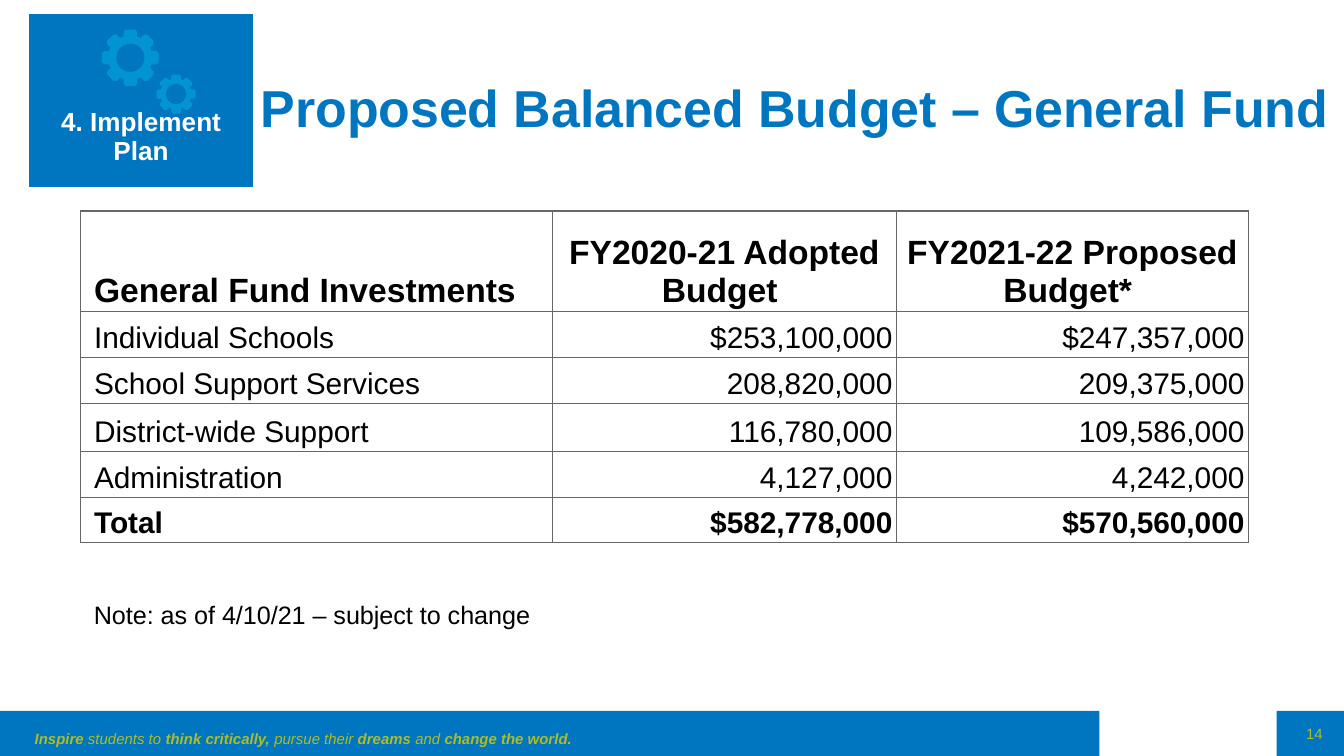
import math

import pptx
import pptx.dml.color
import pptx.enum.shapes
import pptx.enum.text
import pptx.oxml
import pptx.oxml.ns
import pptx.util

Inches = pptx.util.Inches
Shape = pptx.enum.shapes.MSO_SHAPE
Align = pptx.enum.text.PP_ALIGN
Anchor = pptx.enum.text.MSO_ANCHOR

BLUE, LIGHT_BLUE, LIME = "0076C0", "0194D3", "B0BC22"
WHITE, BLACK, GRAY = "FFFFFF", "000000", "666666"


def color(value):
    return pptx.dml.color.RGBColor.from_string(value)


def apply(target, values):
    for name, value in values.items():
        setattr(target, name, value)


def margins(left, top, right, bottom):
    sides = ("left", "top", "right", "bottom")
    return {f"margin_{side}": Inches(size) for side, size in zip(sides, (left, top, right, bottom))}


class BudgetPage:
    font = "Arial"

    def __init__(self, deck):
        self.page = deck.slides.add_slide(deck.slide_layouts[5])

    def style(self, span, size, tint, **formats):
        apply(span.font, {"name": self.font, "size": pptx.util.Pt(size), **formats})
        span.font.color.rgb = color(tint)

    def shape(self, kind, left, top, width, height, fill, parent=None):
        shapes = (parent or self.page).shapes
        item = shapes.add_shape(kind, Inches(left), Inches(top), Inches(width), Inches(height))
        item.shadow.inherit = False
        item.fill.solid()
        item.fill.fore_color.rgb = color(fill)
        item.line.fill.background()
        return item

    def title(self, text, left, top, width, height, size, tint):
        box = self.page.shapes.title
        apply(box, {"left": Inches(left), "top": Inches(top),
                    "width": Inches(width), "height": Inches(height)})
        frame = box.text_frame
        apply(frame, {"vertical_anchor": Anchor.TOP, "word_wrap": True,
                      "auto_size": pptx.enum.text.MSO_AUTO_SIZE.NONE,
                      **margins(0.1, 0.1, 0, 0.1)})
        para = frame.paragraphs[0]
        para.alignment = Align.LEFT
        span = para.add_run()
        span.text = text
        self.style(span, size, tint, bold=True)

    def text(self, spans, left, top, width, height, size, tint, wrap=True, **frame_values):
        """Add one paragraph; spans are (text, font formats) pairs."""
        box = self.page.shapes.add_textbox(Inches(left), Inches(top), Inches(width), Inches(height))
        apply(box.text_frame, {"word_wrap": wrap, **frame_values})
        for words, formats in spans:
            span = box.text_frame.paragraphs[0].add_run()
            span.text = words
            self.style(span, size, tint, **formats)

    def table(self, left, top, widths, heights):
        """Add a plain table without banding."""
        frame = self.page.shapes.add_table(len(heights), len(widths), Inches(left), Inches(top),
                                           Inches(sum(widths)), Inches(sum(heights)))
        grid = frame.table
        apply(grid, {"first_row": False, "horz_banding": False})
        for column, width in zip(grid.columns, widths):
            column.width = Inches(width)
        for row, height in zip(grid.rows, heights):
            row.height = Inches(height)
        return grid

    def cell(self, cell, text, size, tint, border, fill=None, bold=False,
             alignment=Align.LEFT, spacing=None, **cell_values):
        apply(cell, cell_values)
        para = cell.text_frame.paragraphs[0]
        para.text = text
        apply(para, {"alignment": alignment, "line_spacing": spacing})
        for span in para.runs:
            self.style(span, size, tint, bold=bold)
        properties = cell._tc.get_or_add_tcPr()
        for side in ("lnL", "lnR", "lnT", "lnB"):
            properties.append(pptx.oxml.parse_xml(
                f'<a:{side} {pptx.oxml.ns.nsdecls("a")} w="9525"><a:solidFill>'
                f'<a:srgbClr val="{border}"/></a:solidFill></a:{side}>'))
        if fill:
            cell.fill.solid()
            cell.fill.fore_color.rgb = color(fill)
        else:
            cell.fill.background()

    def gear(self, center_x, center_y, diameter, tooth, ring, hole):
        """Group a disc, eight teeth on a ring of the given radius, and a hole."""
        group = self.page.shapes.add_group_shape()

        def centered(kind, x, y, size, fill):
            return self.shape(kind, x - size / 2, y - size / 2, size, size, fill, group)

        centered(Shape.OVAL, center_x, center_y, diameter, LIGHT_BLUE)
        for degrees in range(0, 360, 45):
            angle = math.radians(degrees)
            item = centered(Shape.SNIP_2_SAME_RECTANGLE, center_x + ring * math.sin(angle),
                            center_y - ring * math.cos(angle), tooth, LIGHT_BLUE)
            item.rotation = degrees
        centered(Shape.OVAL, center_x, center_y, hole, BLUE)


def main():
    deck = pptx.Presentation()
    apply(deck, {"slide_width": Inches(10), "slide_height": Inches(10 * 9 / 16)})
    budget = BudgetPage(deck)

    budget.shape(Shape.RECTANGLE, 0, 5.29, 10, 0.34, BLUE)
    budget.shape(Shape.RECTANGLE, 8.18, 4.93, 1.32, 0.74, WHITE)
    strong, light = {"bold": True, "italic": True}, {"bold": False, "italic": True}
    motto = [("Inspire", strong), (" students to ", light), ("think critically,", strong),
             (" pursue their ", light), ("dreams", strong), (" and ", light),
             ("change the world.", strong)]
    budget.text(motto, 0.16, 5.29, 4.66, 0.25, 8, LIME, **margins(0.1, 0.14, 0.1, 0.05))
    budget.text([("14", {})], 9.62, 5.31, 0.38, 0.3, 8, LIME,
                vertical_anchor=Anchor.MIDDLE, **margins(0.1, 0.1, 0.1, 0.1))
    budget.title("Proposed Balanced Budget – General Fund", 1.84, 0.46, 8.19, 0.66, 27.75, BLUE)

    rows = [
        ("General Fund Investments", "FY2020-21 Adopted Budget ", "FY2021-22 Proposed Budget* "),
        ("Individual Schools", "$253,100,000", "$247,357,000"),
        ("School Support Services", "208,820,000", "209,375,000"),
        ("District-wide Support", "116,780,000", "109,586,000"),
        ("Administration", "4,127,000", "4,242,000"),
        ("Total", "$582,778,000", "$570,560,000"),
    ]
    investments = budget.table(0.6, 1.57, [3.51, 2.56, 2.62], [0.75, 0.34, 0.34, 0.36, 0.34, 0.34])
    last = len(rows) - 1
    for row, values in enumerate(rows):
        header = row == 0
        for column, value in enumerate(values):
            label = column == 0
            side = 0.1 if label else 0.03
            number_align = Align.CENTER if header else Align.RIGHT
            budget.cell(investments.cell(row, column), value, 18 if header else 16, BLACK, GRAY,
                        bold=row in (0, last),
                        alignment=Align.LEFT if label else number_align,
                        spacing=1.15 if row == 1 or (label and not header) else None,
                        vertical_anchor=Anchor.BOTTOM, **margins(side, 0.01, side, 0.02))

    badge = budget.table(0.22, 0.11, [1.66], [1.28])
    budget.cell(badge.cell(0, 0), "4. Implement\vPlan", 14, WHITE, BLUE, fill=BLUE, bold=True,
                alignment=Align.CENTER, **margins(0.1, 0.69, 0.1, 0.1))
    budget.gear(0.97, 0.43, 0.33, 0.1, 0.16, 0.21)
    budget.gear(1.31, 0.7, 0.23, 0.07, 0.11, 0.15)

    budget.text([("Note: as of 4/10/21 – subject to change", {})],
                0.6, 4.41, 3.49, 0.33, 13.5, BLACK, wrap=False,
                auto_size=pptx.enum.text.MSO_AUTO_SIZE.SHAPE_TO_FIT_TEXT)
    deck.save("out.pptx")


if __name__ == "__main__":
    main()
